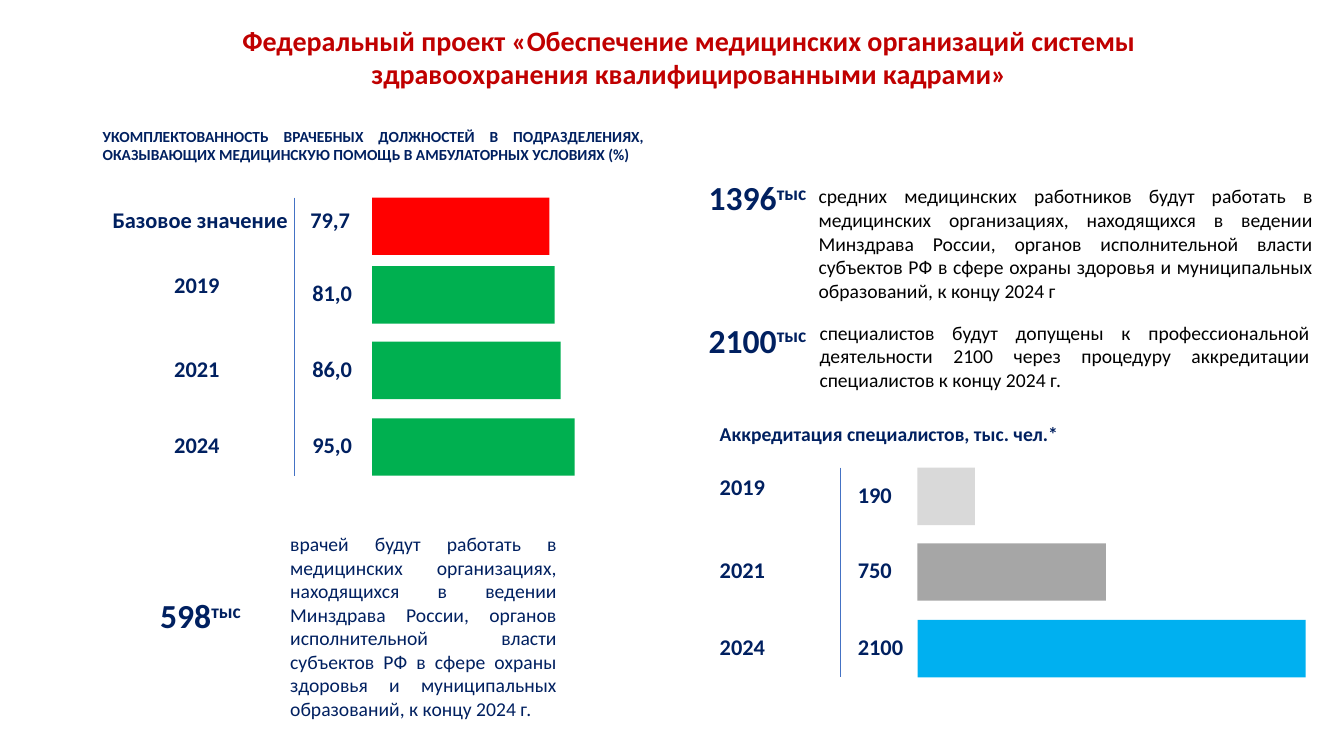
from dataclasses import dataclass
from lxml.etree import SubElement
from pptx import Presentation
from pptx.dml.color import RGBColor
from pptx.enum.shapes import MSO_CONNECTOR, MSO_SHAPE
from pptx.enum.text import MSO_AUTO_SIZE as AutoSize, PP_ALIGN as Align
from pptx.oxml.ns import qn
from pptx.util import Emu, Pt


@dataclass(frozen=True)
class Theme:
    font: str = "Calibri"
    title: str = "C00000"
    navy: str = "002060"
    black: str = "000000"
    axis: str = "4472C4"
    red: str = "FF0000"
    green: str = "00B050"
    light_grey: str = "D9D9D9"
    grey: str = "A6A6A6"
    blue: str = "00B0F0"
    title_size: int = 20
    caption_size: int = 11
    body_size: int = 14
    label_size: int = 16
    number_size: int = 24
    axis_width: float = 0.5


THEME = Theme()
PX = 9144
SLIDE_WIDTH, SLIDE_HEIGHT = 1333, 750
BAR_HEIGHT = 57
LABEL_HEIGHT = 37
LABEL_DROP = 8

TITLE = ("Федеральный проект «Обеспечение медицинских организаций системы "
         "здравоохранения квалифицированными кадрами»")

STAFFING = {
    "heading": ("УКОМПЛЕКТОВАННОСТЬ ВРАЧЕБНЫХ ДОЛЖНОСТЕЙ В ПОДРАЗДЕЛЕНИЯХ, "
                "ОКАЗЫВАЮЩИХ МЕДИЦИНСКУЮ ПОМОЩЬ В АМБУЛАТОРНЫХ УСЛОВИЯХ (%)"),
    "heading_box": (92, 121, 557, 47),
    "heading_format": {"size": THEME.caption_size, "align": Align.JUSTIFY},
    "baseline": ("Базовое значение", "79,7", 176, THEME.red),
    "years": [
        ("2019", "81,0", 181, THEME.green),
        ("2021", "86,0", 187, THEME.green),
        ("2024", "95,0", 201, THEME.green),
    ],
    "label_left": 163, "axis_left": 292, "value_left": 300, "bar_left": 369,
    "axis_top": 196, "years_top": 264,
}

ACCREDITATION = {
    "heading": "Аккредитация специалистов, тыс. чел.*",
    "heading_box": (704, 414, 557, 34),
    "heading_format": {"size": THEME.body_size, "align": Align.LEFT},
    "years": [
        ("2019", "190", 57, THEME.light_grey),
        ("2021", "750", 187, THEME.grey),
        ("2024", "2100", 385, THEME.blue),
    ],
    "label_left": 704, "axis_left": 833, "value_left": 841, "bar_left": 910,
    "axis_top": 464, "years_top": 464,
}

TARGETS = [
    ("598", (149, 585), (278, 523, 284, 199), THEME.navy,
     "врачей будут работать в медицинских организациях, находящихся в ведении "
     "Минздрава России, органов исполнительной власти субъектов РФ в сфере "
     "охраны здоровья и муниципальных образований, к концу 2024 г."),
    ("1396", (693, 171), (802, 178, 510, 128), THEME.black,
     "средних медицинских работников будут работать в медицинских организациях, "
     "находящихся в ведении Минздрава России, органов исполнительной власти "
     "субъектов РФ в сфере охраны здоровья и муниципальных образований, "
     "к концу 2024 г"),
    ("2100", (693, 312), (803, 313, 506, 81), THEME.black,
     "специалистов будут допущены к профессиональной деятельности 2100 через "
     "процедуру аккредитации специалистов к концу 2024 г."),
]
UNIT = "тыс"


def scaled(*lengths):
    return [Emu(length * PX) for length in lengths]


def add_text(shapes, box, text, size=THEME.label_size, colour=THEME.navy,
             bold=True, align=Align.LEFT, wrap=True, superscript=""):
    frame = shapes.add_textbox(*scaled(*box)).text_frame
    frame.word_wrap = wrap
    frame.auto_size = AutoSize.SHAPE_TO_FIT_TEXT
    paragraph = frame.paragraphs[0]
    paragraph.alignment = align
    for part in filter(None, (text, superscript)):
        run = paragraph.add_run()
        run.text = part
        run.font.name = THEME.font
        run.font.size = Pt(size)
        run.font.bold = bold
        run.font.color.rgb = RGBColor.from_string(colour)
    if superscript:
        run._r.get_or_add_rPr().set("baseline", "30000")


def add_bar(shapes, left, top, width, colour):
    bar = shapes.add_shape(MSO_SHAPE.RECTANGLE,
                           *scaled(left, top, width, BAR_HEIGHT))
    bar.shadow.inherit = False
    bar.fill.solid()
    bar.fill.fore_color.rgb = RGBColor.from_string(colour)
    bar.line.fill.background()


def add_axis(shapes, left, top, bottom):
    axis = shapes.add_connector(MSO_CONNECTOR.STRAIGHT,
                                *scaled(left, top, left, bottom))
    axis.line.color.rgb = RGBColor.from_string(THEME.axis)
    axis.line.width = Pt(THEME.axis_width)
    SubElement(axis._element.spPr, qn("a:effectLst"))


def add_label(shapes, left, top, text):
    width = 18 + 12 * len(text) - 6 * text.count(",")
    add_text(shapes, (left, top, width, LABEL_HEIGHT), text, wrap=False)


def add_bar_panel(slide, panel):
    shapes = slide.shapes.add_group_shape().shapes
    add_text(shapes, panel["heading_box"], panel["heading"],
             **panel["heading_format"])
    if "baseline" in panel:
        label, value, width, colour = panel["baseline"]
        top = panel["axis_top"]
        add_bar(shapes, panel["bar_left"], top, width, colour)
        add_text(shapes, (93, top + 4, 211, LABEL_HEIGHT), label,
                 align=Align.CENTER)
        add_label(shapes, panel["value_left"] - 2, top + 4, value)
    for row, (year, value, width, colour) in enumerate(panel["years"]):
        top = panel["years_top"] + row * 151 // 2
        year_top = top + (LABEL_DROP if row else 0)
        add_bar(shapes, panel["bar_left"], top, width, colour)
        add_label(shapes, panel["label_left"], year_top, year)
        add_label(shapes, panel["value_left"], top + LABEL_DROP, value)
    add_axis(shapes, panel["axis_left"], panel["axis_top"], top + BAR_HEIGHT)


def main():
    deck = Presentation()
    deck.slide_width, deck.slide_height = scaled(SLIDE_WIDTH, SLIDE_HEIGHT)
    slide = deck.slides.add_slide(deck.slide_layouts[6])
    add_text(slide.shapes, (133, 18, 1101, 77), TITLE, size=THEME.title_size,
             colour=THEME.title, align=Align.CENTER)
    for panel in (STAFFING, ACCREDITATION):
        add_bar_panel(slide, panel)
    for number, corner, description_box, colour, description in TARGETS:
        add_text(slide.shapes, description_box, description,
                 size=THEME.body_size, colour=colour, bold=False,
                 align=Align.JUSTIFY)
        add_text(slide.shapes, (*corner, 182, 50), number,
                 size=THEME.number_size, align=Align.JUSTIFY, superscript=UNIT)
    deck.save("out.pptx")


if __name__ == "__main__":
    main()
